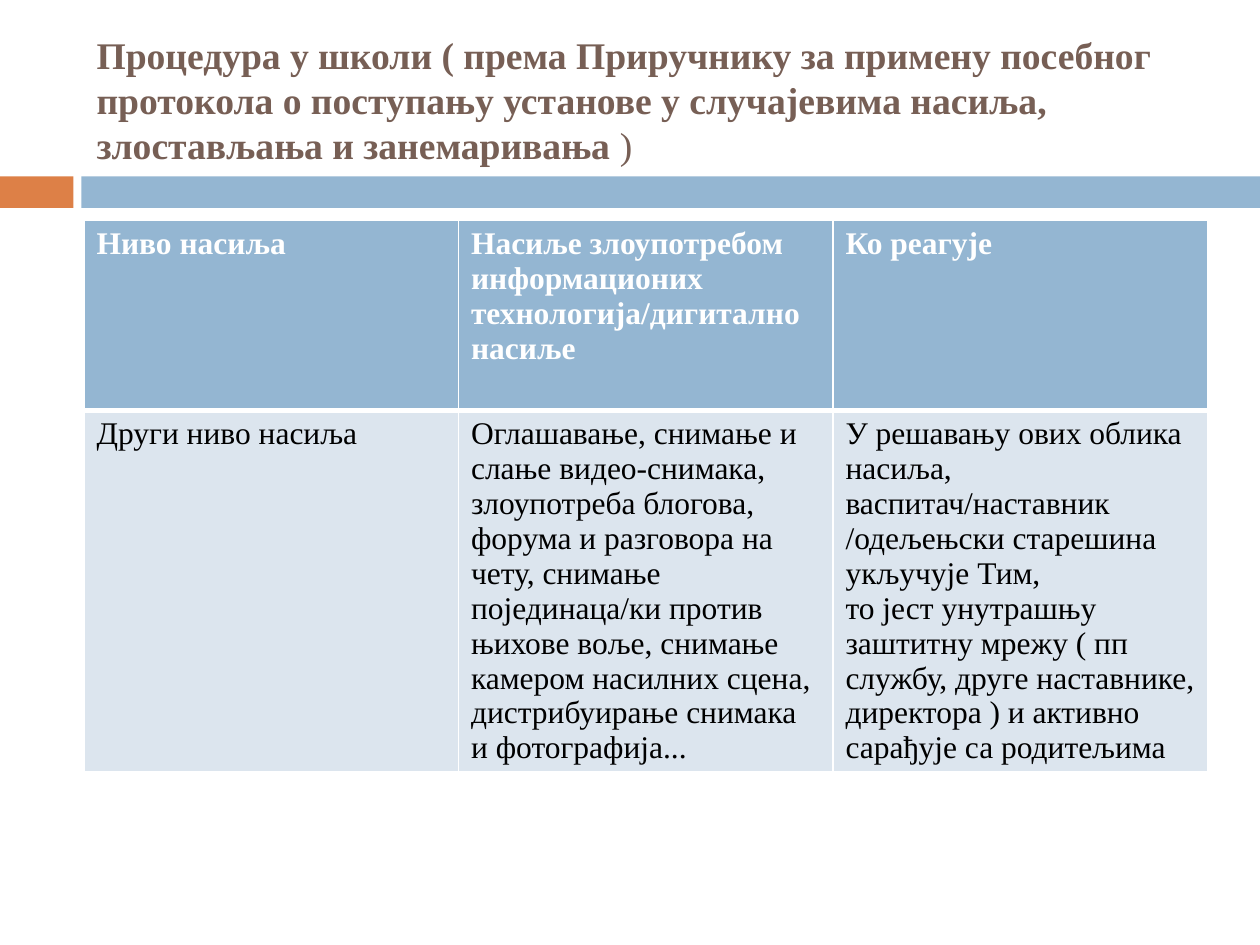
import pptx
import pptx.dml.color
import pptx.enum.shapes
import pptx.enum.text
import pptx.oxml
import pptx.oxml.ns
import pptx.util

Pt = pptx.util.Pt
COLORS = {
    "orange": "DD8047",
    "blue": "94B6D2",
    "pale": "DCE5EE",
    "brown": "775F55",
    "white": "FFFFFF",
    "black": "000000",
}
FONT = "Times New Roman"
TITLE = ("Процедура у школи ( према Приручнику за примену посебног протокола "
         "о поступању установе у случајевима насиља, злостављања и занемаривања ")
HEADINGS = [
    "Ниво насиља",
    "Насиље злоупотребом информационих технологија/дигитално насиље",
    "Ко реагује",
]
SECOND_LEVEL = [
    "Други ниво насиља",
    "Оглашавање, снимање и слање видео-снимака, злоупотреба блогова, форума "
    "и разговора на чету, снимање појединаца/ки против њихове воље, снимање "
    "камером насилних сцена, дистрибуирање снимака и фотографија...",
    "У решавању ових облика насиља, васпитач/наставник /одељењски старешина "
    "укључује Тим,\n"
    "то јест унутрашњу заштитну мрежу ( пп службу, друге наставнике, "
    "директора ) и активно сарађује са родитељима",
]


def rgb(name):
    return pptx.dml.color.RGBColor.from_string(COLORS[name])


def add_text(paragraph, text, size=18, color="black", bold=False):
    run = paragraph.add_run()
    run.text = text
    run.font.name = FONT
    run.font.size = Pt(size)
    run.font.bold = bold
    run.font.color.rgb = rgb(color)


def add_bar(slide, left, width, color):
    shape = slide.shapes.add_shape(
        pptx.enum.shapes.MSO_SHAPE.RECTANGLE, Pt(left), Pt(100.8), Pt(width), Pt(18))
    shape.shadow.inherit = False
    shape.fill.solid()
    shape.fill.fore_color.rgb = rgb(color)
    shape.line.fill.background()


def set_title(slide):
    title = slide.shapes.title
    title.left, title.top, title.width, title.height = Pt(48), Pt(18), Pt(642), Pt(78)
    frame = title.text_frame
    frame.word_wrap = True
    frame.auto_size = pptx.enum.text.MSO_AUTO_SIZE.NONE
    frame.vertical_anchor = pptx.enum.text.MSO_ANCHOR.MIDDLE
    paragraph = frame.paragraphs[0]
    paragraph.alignment = pptx.enum.text.PP_ALIGN.LEFT
    add_text(paragraph, TITLE, size=21.5, color="brown", bold=True)
    add_text(paragraph, ")", size=21.5, color="brown")


def set_borders(cell, **widths):
    """Draw white cell borders; widths maps L, R, T and B to points."""
    properties = cell._tc.get_or_add_tcPr()
    for index, (side, width) in enumerate(widths.items()):
        line = pptx.oxml.parse_xml(
            f'<a:ln{side} {pptx.oxml.ns.nsdecls("a")} w="{Pt(width)}"><a:solidFill>'
            f'<a:srgbClr val="{COLORS["white"]}"/></a:solidFill></a:ln{side}>')
        properties.insert(index, line)


def fill_cell(cell, text, fill, **text_format):
    cell.fill.solid()
    cell.fill.fore_color.rgb = rgb(fill)
    frame = cell.text_frame
    for index, line in enumerate(text.split("\n")):
        paragraph = frame.add_paragraph() if index else frame.paragraphs[0]
        add_text(paragraph, line, **text_format)


def add_violence_table(slide):
    table = slide.shapes.add_table(
        2, 3, Pt(48), Pt(126), Pt(642), Pt(315)).table
    for row, height in zip(table.rows, (108.6, 206.4)):
        row.height = Pt(height)
    for column, texts in enumerate(zip(HEADINGS, SECOND_LEVEL)):
        table.columns[column].width = Pt(214)
        header, body = table.cell(0, column), table.cell(1, column)
        fill_cell(header, texts[0], "blue", color="white", bold=True)
        fill_cell(body, texts[1], "pale")
        set_borders(header, L=1, R=1, T=1, B=3)
        set_borders(body, L=1, R=1, T=3, B=1)


def main():
    presentation = pptx.Presentation()
    presentation.slide_width, presentation.slide_height = Pt(720), Pt(540)
    slide = presentation.slides.add_slide(presentation.slide_layouts[5])
    add_bar(slide, 0, 42, "orange")
    add_bar(slide, 46.5, 673.5, "blue")
    set_title(slide)
    add_violence_table(slide)
    presentation.save("out.pptx")


if __name__ == "__main__":
    main()
